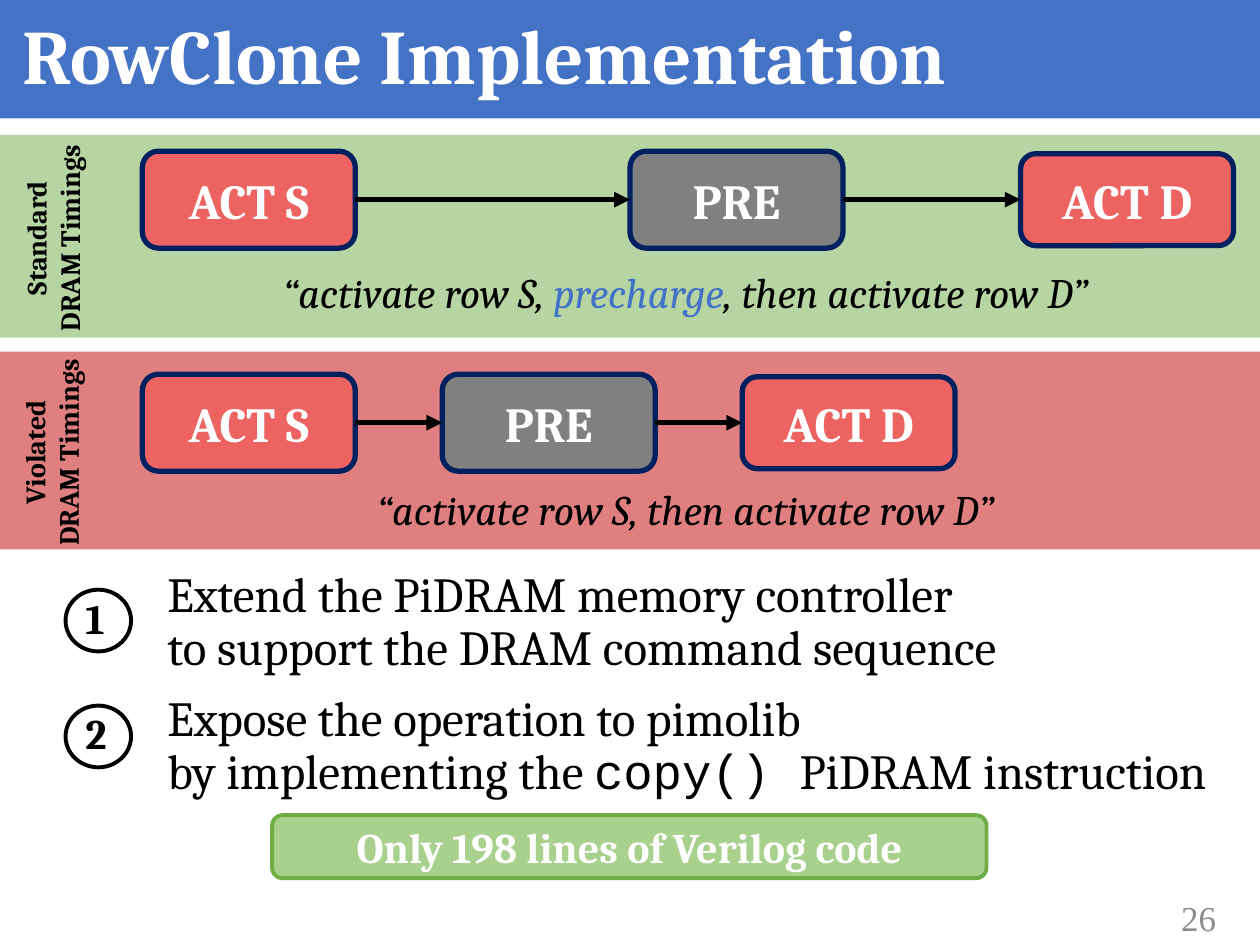
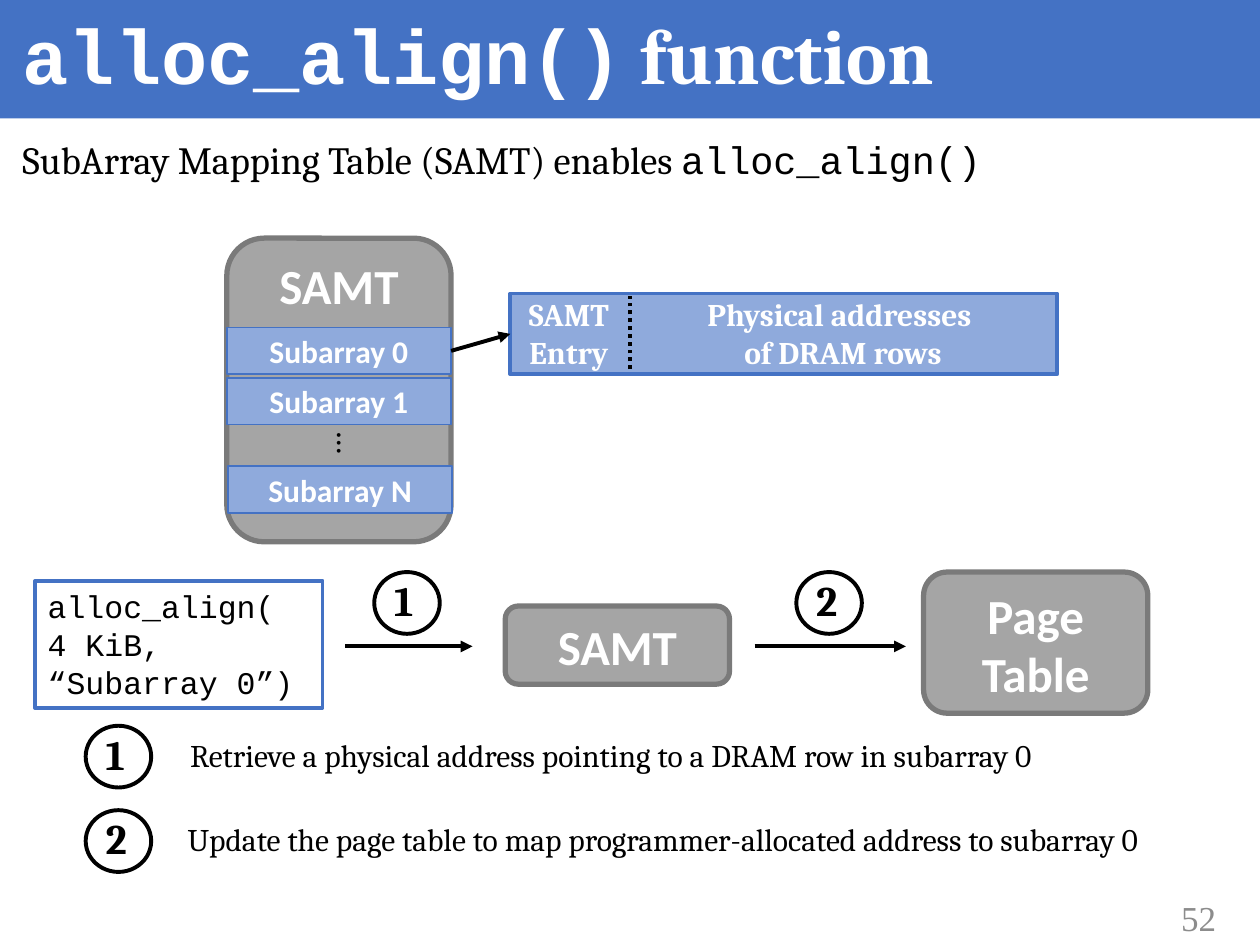
from copy import deepcopy

from lxml import etree
from pptx import Presentation
from pptx import util as u
from pptx.dml.color import RGBColor
from pptx.enum import dml, shapes, text
from pptx.oxml.ns import qn

PX = 9144  # EMU in one px, 100 px to the inch
SLIDE_WIDTH, SLIDE_HEIGHT = 1000, 750
SERIF, SANS, MONO, NUMBER_FONT = "Cambria", "Calibri", "Courier New", "Times New Roman"
COLOURS = {
    "white": "FFFFFF", "black": "000000", "blue": "4472C4", "light blue": "8FAADC",
    "navy": "002060", "coral": "EC6362", "dark grey": "808080", "grey": "A5A5A5",
    "grey edge": "7A7A7A", "number grey": "8C8C8C", "green": "70AD47",
    "light green": "A9D18E", "red": "C00000",
}
RECT = shapes.MSO_SHAPE.RECTANGLE
ROUNDED = shapes.MSO_SHAPE.ROUNDED_RECTANGLE
OVAL = shapes.MSO_SHAPE.OVAL
LEFT, CENTER, RIGHT = text.PP_ALIGN.LEFT, text.PP_ALIGN.CENTER, text.PP_ALIGN.RIGHT
TOP, MIDDLE = text.MSO_ANCHOR.TOP, text.MSO_ANCHOR.MIDDLE
LEFT_SIDE, RIGHT_SIDE = 1, 3  # connection sites of a rectangle


def rgb(name):
    return RGBColor.from_string(COLOURS[name])


def px(*lengths):
    return [u.Emu(length * PX) for length in lengths]


class Deck:
    def __init__(self):
        self.presentation = Presentation()
        self.presentation.slide_width, self.presentation.slide_height = px(
            SLIDE_WIDTH, SLIDE_HEIGHT)
        self.slide = None

    def start_slide(self, title_runs, number):
        """Add a slide with the blue title band, title and page number."""
        layout = self.presentation.slide_layouts.get_by_name("Title Only")
        self.slide = self.presentation.slides.add_slide(layout)
        title = self.slide.shapes.title
        title.left, title.top, title.width, title.height = px(8, 1, 983, 83)
        band = self.shape(RECT, (0, 0, SLIDE_WIDTH, 94), "blue")
        title.element.addprevious(band.element)
        self.set_text(title.text_frame, [title_runs], 44, colour="white", bold=True,
                      anchor=MIDDLE)
        title.text_frame.paragraphs[0].space_after = u.Pt(6)
        self.label((867, 708, 108, 40), [[number]], 20, font=NUMBER_FONT,
                   colour="number grey", align=RIGHT, anchor=MIDDLE)

    def set_text(self, frame, paragraphs, size, font=SERIF, colour="black", bold=False,
                 italic=False, align=LEFT, anchor=TOP, spacing=None, gap=0):
        """Fill a text frame; a run is a string or (string, font, colour)."""
        frame.word_wrap = True
        frame.auto_size = text.MSO_AUTO_SIZE.NONE
        frame.vertical_anchor = anchor
        for index, runs in enumerate(paragraphs):
            paragraph = frame.add_paragraph() if index else frame.paragraphs[0]
            paragraph.alignment = align
            if spacing:
                paragraph.line_spacing = spacing
            if index:
                paragraph.space_before = u.Pt(gap)
            for item in runs:
                words, run_font, run_colour = (
                    (item, font, colour) if isinstance(item, str) else item)
                for part, line in enumerate(words.split("\n")):
                    if part:
                        paragraph.add_line_break()
                        paragraph._p[-1].append(deepcopy(run.font._element))
                    run = paragraph.add_run()
                    run.text = line
                    run.font.size = u.Pt(size)
                    run.font.name = run_font
                    run.font.bold, run.font.italic = bold, italic
                    run.font.color.rgb = rgb(run_colour)

    def label(self, box, paragraphs, size, rotation=0, **style):
        shape = self.slide.shapes.add_textbox(*px(*box))
        shape.rotation = rotation
        self.set_text(shape.text_frame, paragraphs, size, **style)
        return shape

    def shape(self, kind, box, fill=None, line=None, width=1, opacity=None):
        shape = self.slide.shapes.add_shape(kind, *px(*box))
        shape.shadow.inherit = False
        if fill:
            shape.fill.solid()
            shape.fill.fore_color.rgb = rgb(fill)
        else:
            shape.fill.background()
        if opacity:
            colour = shape.element.spPr.find(qn("a:solidFill"))[0]
            etree.SubElement(colour, qn("a:alpha"), val=str(opacity * 1000))
        if line:
            shape.line.color.rgb = rgb(line)
            shape.line.width = u.Pt(width)
        else:
            shape.line.fill.background()
        return shape

    def block(self, kind, box, words, size, fill, line, width, font=SERIF, anchor=MIDDLE):
        """Add a filled shape with bold white centred text."""
        shape = self.shape(kind, box, fill, line, width)
        self.set_text(shape.text_frame, [[words]], size, font=font, colour="white",
                      bold=True, align=CENTER, anchor=anchor)
        return shape

    def line(self, start, end, width=2.25, arrow=True, dash=None):
        """Draw a line between two points or from one shape's right to another's left."""
        joined = not isinstance(start, tuple)
        points = (0, 0, 0, 0) if joined else (*start, *end)
        connector = self.slide.shapes.add_connector(
            shapes.MSO_CONNECTOR.STRAIGHT, *px(*points))
        if joined:
            connector.begin_connect(start, RIGHT_SIDE)
            connector.end_connect(end, LEFT_SIDE)
        connector.line.color.rgb = rgb("black")
        connector.line.width = u.Pt(width)
        if dash:
            connector.line.dash_style = dash
        if arrow:
            outline = connector.element.spPr.find(qn("a:ln"))
            etree.SubElement(outline, qn("a:tailEnd"), type="triangle")
        etree.SubElement(connector.element.spPr, qn("a:effectLst"))

    def numbered_circle(self, left, top, number):
        self.shape(OVAL, (left, top, 52, 49), "white", "black", 2.25)
        self.label((left + 6, top - 3, 67, 50), [[number]], 24, bold=True)


def build_rowclone(deck):
    deck.start_slide(["RowClone Implementation"], "26")

    # Command sequences under standard and violated timings
    timings = [
        ("Standard", "green", (107, 161), (-57, 157), 120, (113, 500, 810),
         (190, 207, 708, 50),
         ["“activate row S, ", ("precharge", SERIF, "blue"), ", then activate row D”"]),
        ("Violated", "red", (279, 157), (-58, 327), 297, (113, 351, 589),
         (251, 379, 586, 50), ["“activate row S, then activate row D”"]),
    ]
    for name, colour, (top, height), corner, row_top, lefts, quote_box, quote in timings:
        deck.shape(RECT, (0, top, SLIDE_WIDTH, height), colour, opacity=50)
        deck.label((*corner, 197, 64), [[name + "\nDRAM Timings"]], 16, rotation=270,
                   bold=True, align=CENTER, anchor=MIDDLE)
        commands = [("ACT S", "coral", 0), ("PRE", "dark grey", 0), ("ACT D", "coral", 2)]
        previous = None
        for left, (command, fill, inset) in zip(lefts, commands):
            box = (left, row_top + inset, 169, 77 - 2 * inset)
            block = deck.block(ROUNDED, box, command, 28, fill, "navy", 3)
            if previous:
                deck.line(previous, block, 3)
            previous = block
        deck.label(quote_box, [quote], 24, italic=True, align=CENTER)

    # Implementation steps
    steps = [
        ["Extend the PiDRAM memory controller\nto support the DRAM command sequence"],
        ["Expose the operation to pimolib \nby implementing the ",
         ("copy() ", MONO, "black"), "PiDRAM instruction"],
    ]
    deck.label((123, 448, 868, 253), steps, 28, spacing=0.9, gap=10)
    for index in range(len(steps)):
        deck.numbered_circle(52, 468 + 92 * index, str(index + 1))
    deck.block(ROUNDED, (216, 647, 567, 50), "Only 198 lines of Verilog code", 24,
               "light green", "green", 2.25)


def build_alloc_align(deck):
    deck.start_slide([("alloc_align()", MONO, "white"), " function"], "52")
    deck.label((8, 107, 983, 60),
               [["SubArray Mapping Table (SAMT) enables ", ("alloc_align()", MONO, "black")]],
               22, spacing=0.9)

    # Grey components: the table, then the two stages of the lookup
    for box, name in [((180, 189, 178, 241), "SAMT"), ((401, 481, 178, 62), "SAMT"),
                      ((733, 454, 178, 112), "Page\nTable")]:
        deck.block(ROUNDED, box, name, 28, "grey", "grey edge", 3, SANS, TOP)

    # Subarray rows and the detail of one entry
    rows = [deck.block(RECT, (left, top, 178, 37), "Subarray " + name, 18,
                       "light blue", "blue", 1, SANS)
            for left, top, name in [(180, 260, "0"), (180, 300, "1"), (181, 370, "N")]]
    deck.label((256, 335, 43, 40), [["…"]], 18, rotation=90, font=SANS)
    entry = deck.shape(RECT, (405, 233, 434, 64), "light blue", "blue", 2.25)
    deck.line(rows[0], entry)
    deck.line((500, 293), (500, 235), arrow=False, dash=dml.MSO_LINE.ROUND_DOT)
    for left, width, words in [(403, 97, "SAMT\nEntry"),
                               (500, 338, "Physical addresses \nof DRAM rows")]:
        deck.label((left, 229, width, 71), [[words]], 18, colour="white", bold=True,
                   align=CENTER)

    # Call and lookup flow
    call = deck.shape(RECT, (28, 461, 228, 101), line="blue", width=2.25)
    deck.set_text(call.text_frame, [["alloc_align(\n4 KiB, “Subarray 0”)"]], 18, font=MONO)
    for start, end in [(274, 375), (599, 719)]:
        deck.line((start, 513), (end, 513))

    # Numbered steps, in the flow and explained below it
    steps = [
        (297, 576, (141, 579, 722, 40),
         "Retrieve a physical address pointing to a DRAM row in subarray 0"),
        (632, 643, (139, 646, 818, 40),
         "Update the page table to map programmer-allocated address to subarray 0"),
    ]
    for number, (flow_left, top, box, words) in enumerate(steps, 1):
        deck.numbered_circle(flow_left, 454, str(number))
        deck.numbered_circle(68, top, str(number))
        deck.label(box, [[words]], 18)


def main():
    deck = Deck()
    build_rowclone(deck)
    build_alloc_align(deck)
    deck.presentation.save("out.pptx")


if __name__ == "__main__":
    main()
